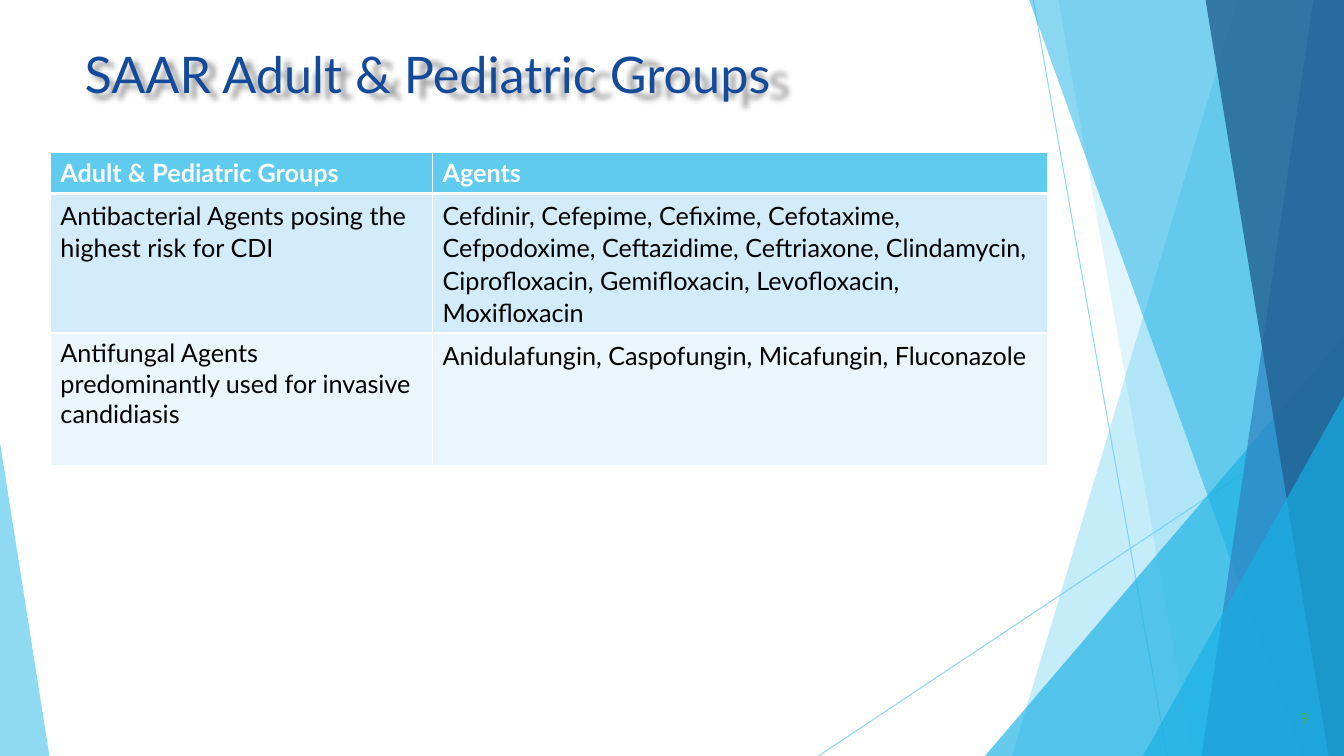
from dataclasses import dataclass

from lxml.etree import SubElement
from pptx import Presentation
from pptx.dml.color import RGBColor
from pptx.enum.shapes import MSO_CONNECTOR, MSO_SHAPE
from pptx.enum.text import MSO_ANCHOR, MSO_AUTO_SIZE, PP_ALIGN
from pptx.oxml.ns import qn
from pptx.util import Emu, Inches, Pt

FONT = "Lato"
WHITE = RGBColor(0xFF, 0xFF, 0xFF)
BLACK = RGBColor(0x00, 0x00, 0x00)
NAVY = RGBColor(0x13, 0x4A, 0x99)
GREEN = RGBColor(0x42, 0xB0, 0x51)
SKY = RGBColor(0x5F, 0xCB, 0xEF)
CYAN = RGBColor(0x17, 0xB0, 0xE4)
BLUE = RGBColor(0x2E, 0x83, 0xC3)
DEEP_BLUE = RGBColor(0x22, 0x62, 0x92)
PALE = RGBColor(0xD2, 0xEC, 0xF9)
PALEST = RGBColor(0xEA, 0xF6, 0xFC)

SLIDE_WIDTH = Inches(13.333)
SLIDE_HEIGHT = Inches(7.5)


@dataclass(frozen=True)
class Ray:
    """A thin line between two points, in percent of the slide."""
    x1: float
    y1: float
    x2: float
    y2: float


@dataclass(frozen=True)
class Band:
    """A slanted band from its top and bottom left ends to the right edge."""
    top_left: float
    bottom_left: float
    color: RGBColor
    opacity: int


@dataclass(frozen=True)
class Wedge:
    """A right triangle on the bottom edge, in percent of the slide."""
    left: float
    top: float
    width: float
    apex: float
    color: RGBColor
    opacity: int


@dataclass(frozen=True)
class Entry:
    """The wording and line spacing of one table cell."""
    text: str
    spacing: float = 1.0


@dataclass(frozen=True)
class GroupRow:
    """One table row with its height in percent of the slide."""
    height: float
    entries: tuple[Entry, Entry]
    fill: RGBColor
    color: RGBColor = BLACK
    bold: bool = False


RAYS = [Ray(76.88, 0, 86.85, 100), Ray(100, 53.73, 60.9, 100)]
FACETS = [
    Band(92.1, 75.3, SKY, 36),
    Band(78.75, 88.73, SKY, 20),
    Wedge(73.28, 44.4, 26.72, 1, CYAN, 66),
    Band(76.58, 96.83, CYAN, 50),
    Band(97.73, 89.4, BLUE, 70),
    Band(89.7, 98.85, DEEP_BLUE, 80),
    Wedge(85.05, 52.4, 14.95, 1, CYAN, 66),
    Wedge(0, 58.53, 3.68, 0, SKY, 70),
]
COLUMNS = (28.43, 45.75)
ROWS = [
    GroupRow(5.47, (Entry("Adult & Pediatric Groups"), Entry("Agents")), SKY, WHITE, True),
    GroupRow(18.27, (
        Entry("Antibacterial Agents posing the highest risk for CDI", 1.07),
        Entry("Cefdinir, Cefepime, Cefixime, Cefotaxime, Cefpodoxime, Ceftazidime, "
              "Ceftriaxone, Clindamycin, Ciprofloxacin, Gemifloxacin, Levofloxacin, "
              "Moxifloxacin", 1.07)), PALE),
    GroupRow(17.47, (
        Entry("Antifungal Agents predominantly used for invasive candidiasis"),
        Entry("Anidulafungin, Caspofungin, Micafungin, Fluconazole", 1.07)), PALEST),
]


def across(percent: float) -> Emu:
    """Return a share of the slide's width."""
    return Emu(round(SLIDE_WIDTH * percent / 100))


def down(percent: float) -> Emu:
    """Return a share of the slide's height."""
    return Emu(round(SLIDE_HEIGHT * percent / 100))


def write_text(frame, text: str, *, size: float, color: RGBColor,
               bold: bool = False, spacing: float = 1.0) -> None:
    """Fill a text frame with one left-aligned paragraph."""
    frame.word_wrap = True
    paragraph = frame.paragraphs[0]
    paragraph.alignment = PP_ALIGN.LEFT
    paragraph.line_spacing = spacing
    run = paragraph.add_run()
    run.text = text
    run.font.name = FONT
    run.font.size = Pt(size)
    run.font.bold = bold
    run.font.color.rgb = color


def set_opacity(color_format, opacity: int) -> None:
    """Add an alpha value to a solid fill."""
    for color in color_format._xPr.iter(qn("a:srgbClr")):
        SubElement(color, qn("a:alpha"), val=str(opacity * 1000))


def draw_ray(slide, ray: Ray) -> None:
    """Draw one thin translucent line."""
    line = slide.shapes.add_connector(MSO_CONNECTOR.STRAIGHT, across(ray.x1), down(ray.y1),
                                      across(ray.x2), down(ray.y2))
    line.line.color.rgb = SKY
    line.line.width = Pt(0.75)
    set_opacity(line.line.fill, 70)
    SubElement(line._element.spPr, qn("a:effectLst"))


def draw_facet(slide, facet: Band | Wedge) -> None:
    """Draw one translucent band or wedge."""
    if isinstance(facet, Band):
        builder = slide.shapes.build_freeform(across(facet.top_left), 0)
        builder.add_line_segments([(SLIDE_WIDTH, 0), (SLIDE_WIDTH, SLIDE_HEIGHT),
                                   (across(facet.bottom_left), SLIDE_HEIGHT)])
        shape = builder.convert_to_shape()
    else:
        shape = slide.shapes.add_shape(MSO_SHAPE.ISOSCELES_TRIANGLE, across(facet.left),
                                       down(facet.top), across(facet.width),
                                       down(100 - facet.top))
        shape.adjustments[0] = facet.apex
    shape.shadow.inherit = False
    shape.line.fill.background()
    shape.fill.solid()
    shape.fill.fore_color.rgb = facet.color
    set_opacity(shape.fill, facet.opacity)


def add_heading(slide, text: str) -> None:
    """Place the title with its soft, slightly widened shadow."""
    title = slide.shapes.title
    title.left, title.top = across(5.55), down(5.07)
    title.width, title.height = across(70.5), down(19.2)
    title.fill.background()
    title.text_frame.vertical_anchor = MSO_ANCHOR.TOP
    title.text_frame.auto_size = MSO_AUTO_SIZE.NONE
    write_text(title.text_frame, text, size=36, color=NAVY)
    effects = SubElement(title._element.spPr, qn("a:effectLst"))
    shadow = SubElement(effects, qn("a:outerShdw"), blurRad="50800", dist="38100",
                        dir="2700000", sx="102000", sy="102000", algn="tl", rotWithShape="0")
    black = SubElement(shadow, qn("a:srgbClr"), val=str(BLACK))
    SubElement(black, qn("a:alpha"), val="40000")


def add_borders(cell, bottom: float) -> None:
    """Give a cell white borders with its own bottom width."""
    properties = cell._tc.get_or_add_tcPr()
    for side, width in (("L", 1), ("R", 1), ("T", 1), ("B", bottom)):
        edge = SubElement(properties, qn(f"a:ln{side}"), w=str(Pt(width)))
        fill = SubElement(edge, qn("a:solidFill"))
        SubElement(fill, qn("a:srgbClr"), val=str(WHITE))


def add_agents_table(slide) -> None:
    """Build the table of groups and their agents."""
    table = slide.shapes.add_table(len(ROWS), len(COLUMNS), across(3.75), down(20.13),
                                   across(sum(COLUMNS)),
                                   down(sum(row.height for row in ROWS))).table
    for column, width in zip(table.columns, COLUMNS):
        column.width = across(width)
    for row_index, group in enumerate(ROWS):
        table.rows[row_index].height = down(group.height)
        for column_index, entry in enumerate(group.entries):
            cell = table.cell(row_index, column_index)
            add_borders(cell, bottom=3 if row_index == 0 else 1)
            cell.fill.solid()
            cell.fill.fore_color.rgb = group.fill
            write_text(cell.text_frame, entry.text, size=18, color=group.color,
                       bold=group.bold, spacing=entry.spacing)


def main() -> None:
    """Build and save the slide."""
    deck = Presentation()
    deck.slide_width, deck.slide_height = SLIDE_WIDTH, SLIDE_HEIGHT
    slide = deck.slides.add_slide(deck.slide_layouts[5])
    for ray in RAYS:
        draw_ray(slide, ray)
    for facet in FACETS:
        draw_facet(slide, facet)
    page_number = slide.shapes.add_textbox(across(96), down(93.2), across(3), down(3.87))
    write_text(page_number.text_frame, "9", size=11, color=GREEN)
    add_heading(slide, "SAAR Adult & Pediatric Groups")
    add_agents_table(slide)
    deck.save("out.pptx")


if __name__ == "__main__":
    main()
